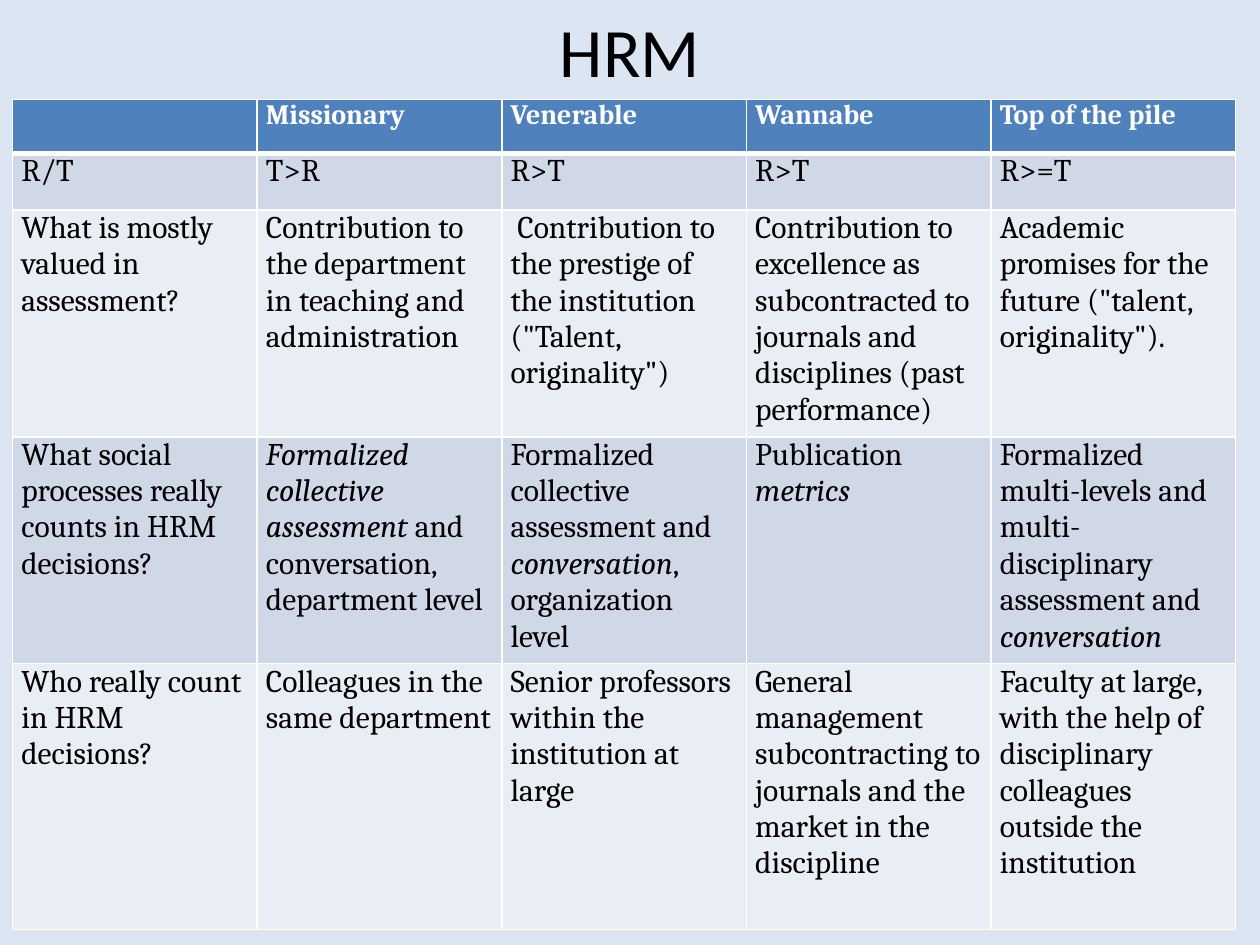
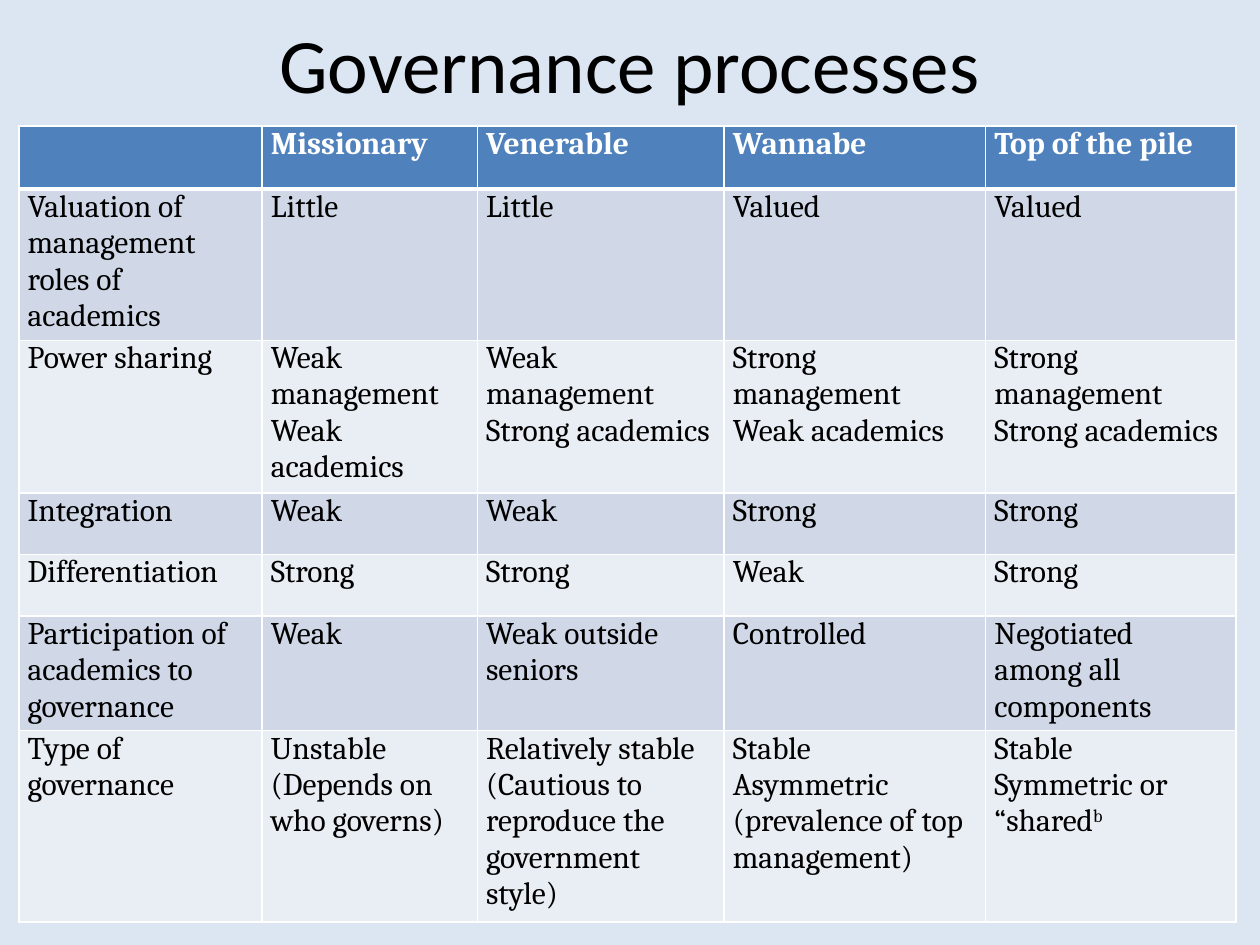
from dataclasses import dataclass

from lxml import etree
from pptx import Presentation
from pptx.dml.color import RGBColor
from pptx.enum.text import MSO_ANCHOR, PP_ALIGN
from pptx.oxml.ns import qn
from pptx.util import Pt

CENTER = PP_ALIGN.CENTER
MIDDLE = MSO_ANCHOR.MIDDLE
BLANK = 6


@dataclass(frozen=True)
class Theme:
    back: str = "DCE6F2"
    head: str = "4F81BD"
    bands: tuple[str, str] = ("D0D8E8", "E9EDF4")
    light: str = "FFFFFF"
    dark: str = "000000"
    title_font: str = "Calibri"
    cell_font: str = "Cambria"
    body: float = 18
    thin: float = 1
    thick: float = 3
    inset: float = 5


@dataclass(frozen=True)
class Page:
    """Lengths are points; *text* is italic, and text after ^ is raised."""
    title: str
    title_size: float
    head_size: float
    left: float
    top: float
    cols: tuple[float, ...]
    rows: tuple[float, ...]
    body: tuple[tuple[str, ...], ...]


THEME = Theme()
TYPES = ("", "Missionary", "Venerable", "Wannabe", "Top of the pile")

PAGES = (
    Page(
        "HRM", 39.6, 16, 7.2, 56.9,
        (139.8,) * 5,
        (30.7, 32.4, 129.2, 129.2, 152),
        (
            ("R/T", "T>R", "R>T", "R>T", "R>=T"),
            ("What is mostly valued in assessment?",
             "Contribution to the department in teaching and administration",
             ' Contribution to the prestige of the institution ("Talent, originality")',
             "Contribution to excellence as subcontracted to journals and "
             "disciplines (past performance)",
             'Academic promises for the future ("talent, originality").'),
            ("What social processes really counts in HRM decisions?",
             "*Formalized collective assessment* and conversation, department level",
             "Formalized collective assessment and *conversation*, organization level",
             "Publication *metrics*",
             "Formalized multi-levels and multi-disciplinary assessment and "
             "*conversation*"),
            ("Who really count in HRM decisions?",
             "Colleagues in the same department",
             "Senior professors within the institution at large",
             "General management subcontracting to journals and the market "
             "in the discipline",
             "Faculty at large, with the help of disciplinary colleagues "
             "outside the institution"),
        ),
    ),
    Page(
        "Governance processes", 44, 18, 10.8, 72,
        (139, 123, 141, 149.5, 143),
        (36, 83.5, 87.2, 35.2, 35.2, 65.6, 109.3),
        (
            ("Valuation of management roles of academics",
             "Little", "Little", "Valued", "Valued"),
            ("Power sharing",
             "Weak management\nWeak academics",
             "Weak management\nStrong academics",
             "Strong management\nWeak academics",
             "Strong management\nStrong academics"),
            ("Integration", "Weak", "Weak", "Strong", "Strong"),
            ("Differentiation", "Strong", "Strong", "Weak", "Strong"),
            ("Participation of academics to governance",
             "Weak", "Weak outside seniors", "Controlled",
             "Negotiated among all components"),
            ("Type of governance",
             "Unstable\n(Depends on who governs)",
             "Relatively stable\n(Cautious to reproduce the government style)",
             "Stable\nAsymmetric (prevalence of top management)",
             "Stable\nSymmetric or “shared^b"),
        ),
    ),
)


def style(para, face: str, size: float, color: str, bold: bool = False) -> None:
    font = para.font
    font.name, font.size, font.bold = face, Pt(size), bold
    font.color.rgb = RGBColor.from_string(color)


def write(para, text: str) -> None:
    """Add runs, turning the * and ^ marks into italic and raised text."""
    plain, _, raised = text.partition("^")
    for i, part in enumerate(plain.split("*")):
        if part:
            run = para.add_run()
            run.text = part
            if i % 2:
                run.font.italic = True
    if raised:
        run = para.add_run()
        run.text = raised
        run._r.get_or_add_rPr().set("baseline", "30000")


def edge(cell, side: str, width: float) -> None:
    line = etree.SubElement(cell._tc.get_or_add_tcPr(), qn(f"a:ln{side}"),
                            w=str(Pt(width)))
    fill = etree.SubElement(line, qn("a:solidFill"))
    etree.SubElement(fill, qn("a:srgbClr"), val=THEME.light)


def fill_cell(cell, text: str, row: int, size: float) -> None:
    is_head = row == 0
    cell.margin_left = cell.margin_right = Pt(THEME.inset)
    cell.margin_top = cell.margin_bottom = 0
    for side in "LRTB":
        heavy = (row, side) in ((0, "B"), (1, "T"))
        edge(cell, side, THEME.thick if heavy else THEME.thin)
    cell.fill.solid()
    color = THEME.head if is_head else THEME.bands[(row - 1) % 2]
    cell.fill.fore_color.rgb = RGBColor.from_string(color)
    frame = cell.text_frame
    for i, line in enumerate(text.split("\n")):
        para = frame.add_paragraph() if i else frame.paragraphs[0]
        style(para, THEME.cell_font, size,
              THEME.light if is_head else THEME.dark, is_head)
        write(para, line)


def add_title(slide, page: Page) -> None:
    box = slide.shapes.add_textbox(Pt(36), 0, Pt(648), Pt(page.top))
    frame = box.text_frame
    frame.word_wrap = True
    frame.vertical_anchor = MIDDLE
    para = frame.paragraphs[0]
    para.alignment = CENTER
    style(para, THEME.title_font, page.title_size, THEME.dark)
    write(para, page.title)


def add_grid(slide, page: Page) -> None:
    grid = slide.shapes.add_table(
        len(page.rows), len(page.cols), Pt(page.left), Pt(page.top),
        Pt(sum(page.cols)), Pt(sum(page.rows))).table
    for col, width in zip(grid.columns, page.cols):
        col.width = Pt(width)
    for row, height in zip(grid.rows, page.rows):
        row.height = Pt(height)
    for r, texts in enumerate((TYPES, *page.body)):
        size = THEME.body if r else page.head_size
        for c, text in enumerate(texts):
            fill_cell(grid.cell(r, c), text, r, size)


def main() -> None:
    deck = Presentation()
    deck.slide_width, deck.slide_height = Pt(720), Pt(540)
    for page in PAGES:
        slide = deck.slides.add_slide(deck.slide_layouts[BLANK])
        back = slide.background.fill
        back.solid()
        back.fore_color.rgb = RGBColor.from_string(THEME.back)
        add_title(slide, page)
        add_grid(slide, page)
    deck.save("out.pptx")


if __name__ == "__main__":
    main()
